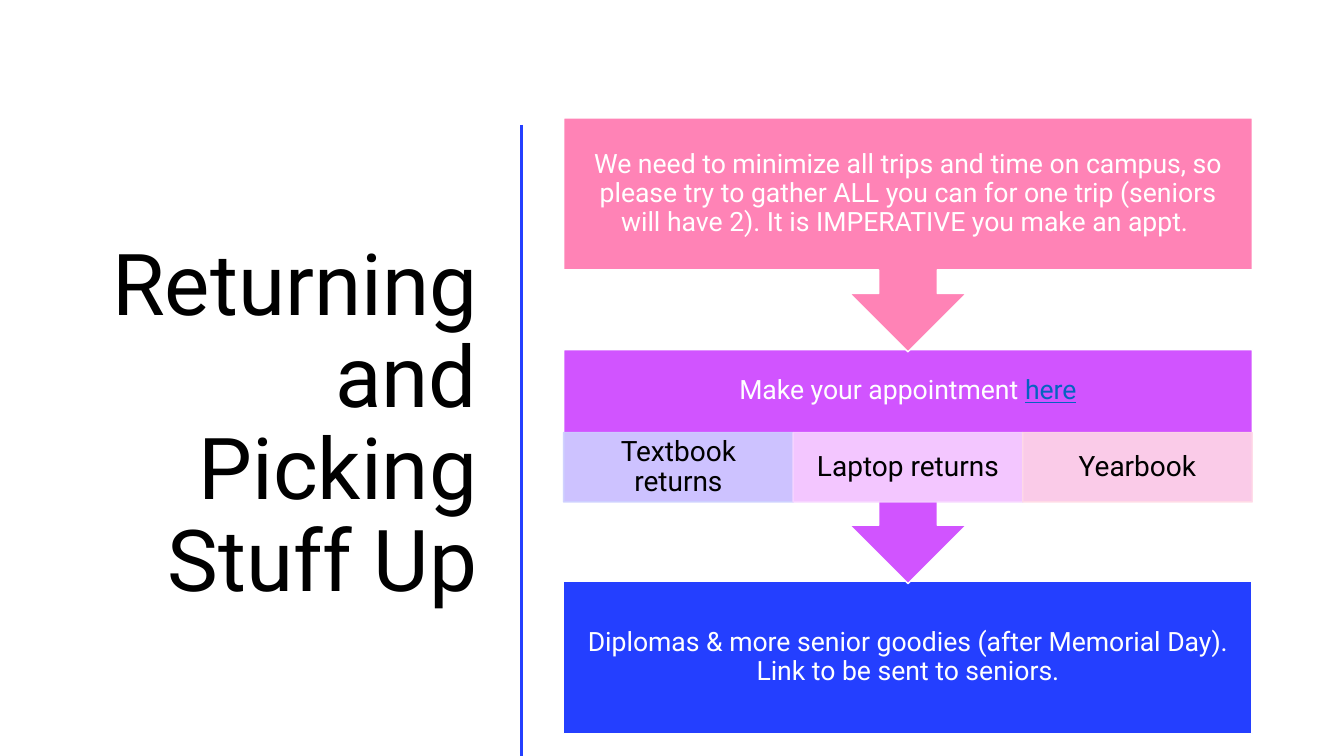
from dataclasses import dataclass

import pptx
import pptx.dml.color
import pptx.enum.shapes
import pptx.enum.text
import pptx.oxml.ns
import pptx.util
from lxml import etree

Inches = pptx.util.Inches
Pt = pptx.util.Pt
RGBColor = pptx.dml.color.RGBColor
Shape = pptx.enum.shapes.MSO_SHAPE
Align = pptx.enum.text.PP_ALIGN
qn = pptx.oxml.ns.qn

WHITE = RGBColor(0xFF, 0xFF, 0xFF)
BLACK = RGBColor(0x00, 0x00, 0x00)
BLUE = RGBColor(0x24, 0x3F, 0xFF)
PURPLE = RGBColor(0xD1, 0x54, 0xFF)
PINK = RGBColor(0xFF, 0x83, 0xB6)
LAVENDER = RGBColor(0xCD, 0xCF, 0xFF)
LILAC = RGBColor(0xF7, 0xD3, 0xFF)
BLUSH = RGBColor(0xFF, 0xD9, 0xE6)
LINK_BLUE = RGBColor(0x05, 0x63, 0xC1)

FONT = "Roboto"
FLOW_LEFT, FLOW_WIDTH = 5.59, 6.83
STEP_HEIGHT, CALLOUT_HEIGHT = 1.51, 2.32
ERRAND_TOP, ERRAND_HEIGHT = 4.29, 0.69


@dataclass(frozen=True)
class Box:
    left: float
    top: float
    width: float
    height: float

    def emu(self) -> list[int]:
        return [Inches(v) for v in (self.left, self.top, self.width, self.height)]


@dataclass(frozen=True)
class TextStyle:
    size: float
    color: RGBColor
    inset_x: float
    inset_y: float
    align: Align = Align.CENTER


@dataclass(frozen=True)
class Step:
    top: float
    height: float
    text_height: float
    fill: RGBColor
    text: str
    linked: str = ""
    has_arrow: bool = True


@dataclass(frozen=True)
class Errand:
    text: str
    fill: RGBColor


TITLE_STYLE = TextStyle(61, BLACK, 0.1, 0.05, Align.RIGHT)
STEP_STYLE = TextStyle(19, WHITE, 0.15, 0.15)
ERRAND_STYLE = TextStyle(20, BLACK, 0.16, 0.03)

GATHER = Step(1.17, CALLOUT_HEIGHT, STEP_HEIGHT, PINK,
              "We need to minimize all trips and time on campus, so please try to "
              "gather ALL you can for one trip (seniors will have 2). "
              "It is IMPERATIVE you make an appt. ")
APPOINTMENT = Step(3.47, CALLOUT_HEIGHT, 0.82, PURPLE,
                   "Make your appointment ", linked="here")
DIPLOMAS = Step(5.77, STEP_HEIGHT, STEP_HEIGHT, BLUE,
                "Diplomas & more senior goodies (after Memorial Day). "
                "Link to be sent to seniors.", has_arrow=False)
ERRANDS = [
    Errand("Textbook returns", LAVENDER),
    Errand("Laptop returns", LILAC),
    Errand("Yearbook", BLUSH),
]


def set_all(target, values: dict) -> None:
    for name, value in values.items():
        setattr(target, name, value)


def add_text(slide, box: Box, text: str, style: TextStyle, linked: str = "") -> None:
    """Write text, with an optional underlined link-coloured ending."""
    frame = slide.shapes.add_textbox(*box.emu()).text_frame
    set_all(frame, {
        "word_wrap": True,
        "vertical_anchor": pptx.enum.text.MSO_ANCHOR.MIDDLE,
        "margin_left": Inches(style.inset_x),
        "margin_right": Inches(style.inset_x),
        "margin_top": Inches(style.inset_y),
        "margin_bottom": Inches(style.inset_y),
    })
    paragraph = frame.paragraphs[0]
    set_all(paragraph, {"alignment": style.align, "line_spacing": 0.9})
    pieces = [(text, style.color, None)]
    if linked:
        pieces.append((linked, LINK_BLUE, True))
    for words, color, underline in pieces:
        run = paragraph.add_run()
        run.text = words
        set_all(run.font, {"name": FONT, "size": Pt(style.size), "underline": underline})
        run.font.color.rgb = color


def add_block(slide, kind: Shape, box: Box, fill: RGBColor, outline: RGBColor):
    block = slide.shapes.add_shape(kind, *box.emu())
    block.shadow.inherit = False
    block.fill.solid()
    block.fill.fore_color.rgb = fill
    block.line.color.rgb = outline
    block.line.width = Pt(1)
    return block


def add_step(slide, step: Step) -> None:
    kind = Shape.UP_ARROW_CALLOUT if step.has_arrow else Shape.RECTANGLE
    block = add_block(slide, kind, Box(FLOW_LEFT, step.top, FLOW_WIDTH, step.height),
                      step.fill, WHITE)
    if step.has_arrow:
        block.rotation = 180
    add_text(slide, Box(FLOW_LEFT, step.top, FLOW_WIDTH, step.text_height),
             step.text, STEP_STYLE, step.linked)


def add_errands(slide, errands: list[Errand]) -> None:
    width = FLOW_WIDTH / len(errands)
    for column, errand in enumerate(errands):
        box = Box(FLOW_LEFT + column * width, ERRAND_TOP, width, ERRAND_HEIGHT)
        cell = add_block(slide, Shape.RECTANGLE, box, errand.fill, errand.fill)
        for color in cell._element.spPr.iter(qn("a:srgbClr")):
            etree.SubElement(color, qn("a:alpha"), val="90000")
        add_text(slide, box, errand.text, ERRAND_STYLE)


def add_divider(slide) -> None:
    divider = slide.shapes.add_connector(
        pptx.enum.shapes.MSO_CONNECTOR.STRAIGHT,
        Inches(5.17), Inches(1.24), Inches(5.17), Inches(7.5))
    divider.line.color.rgb = BLUE
    divider.line.width = Pt(2)
    etree.SubElement(divider._element.spPr, qn("a:effectLst"))


def main() -> None:
    deck = pptx.Presentation()
    set_all(deck, {"slide_width": Inches(13.33), "slide_height": Inches(7.5)})
    slide = deck.slides.add_slide(deck.slide_layouts[6])
    add_text(slide, Box(0.52, 1.17, 4.31, 6.11),
             "Returning and Picking Stuff Up", TITLE_STYLE)
    add_divider(slide)
    add_step(slide, DIPLOMAS)
    add_step(slide, APPOINTMENT)
    add_errands(slide, ERRANDS)
    add_step(slide, GATHER)
    deck.save("out.pptx")


if __name__ == "__main__":
    main()
